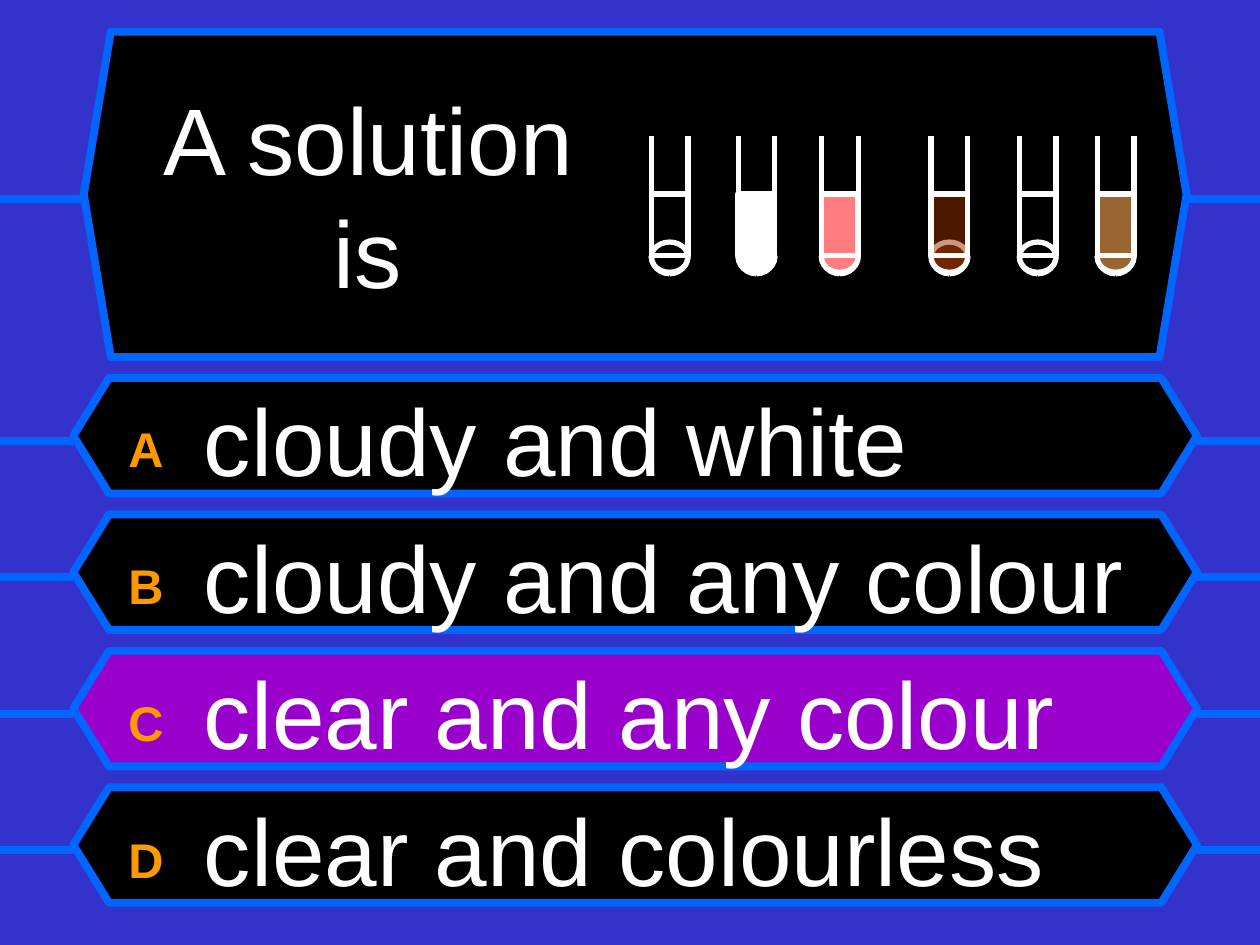
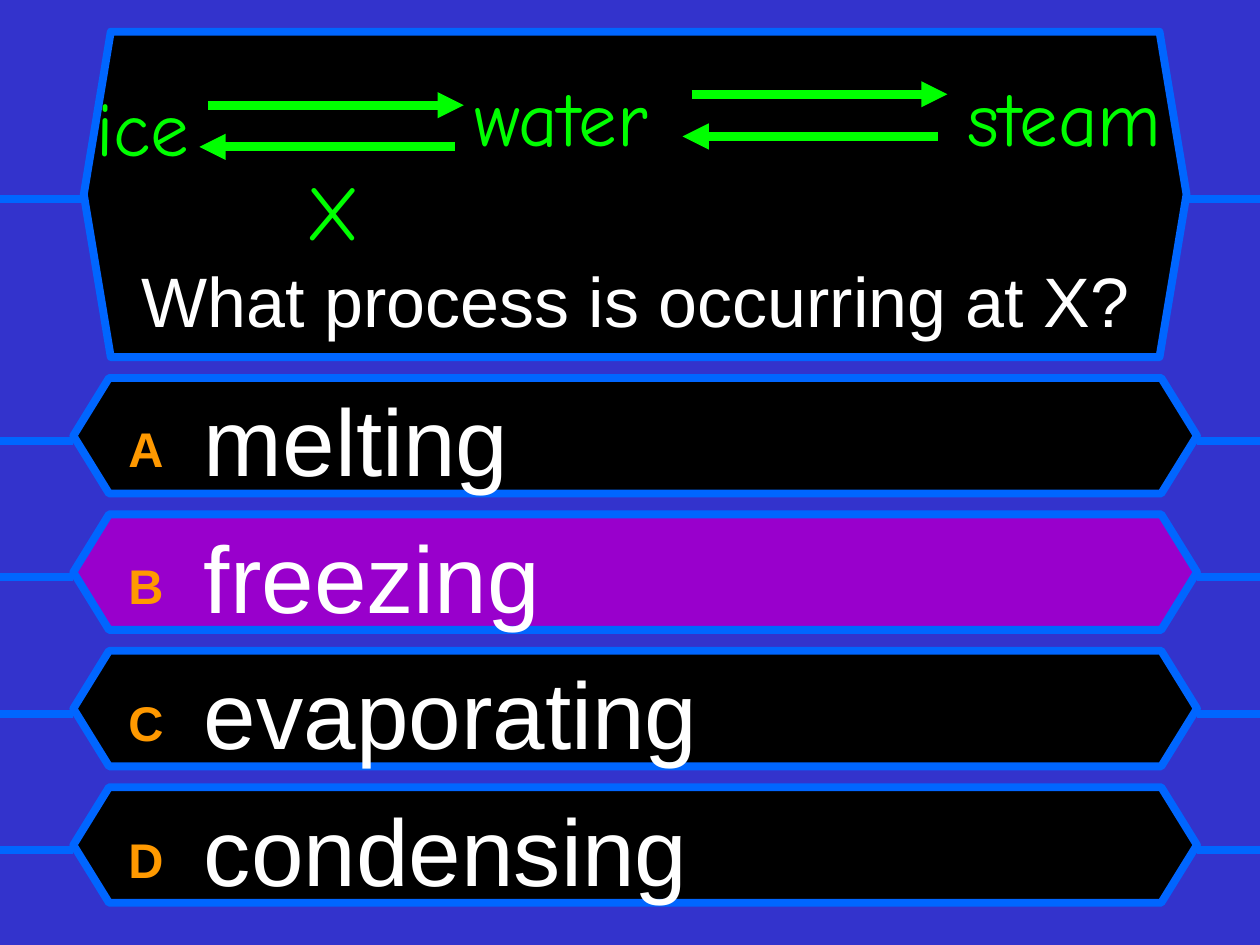
from lxml.etree import SubElement
from pptx import Presentation
from pptx.dml.color import RGBColor as Rgb
from pptx.enum.shapes import MSO_CONNECTOR as Link, MSO_SHAPE as Kind
from pptx.enum.text import MSO_ANCHOR as Anchor, MSO_AUTO_SIZE as Auto, PP_ALIGN as Align
from pptx.oxml.ns import qn
from pptx.util import Cm, Pt

HUE = {
    "back": "3333CC", "panel": "000000", "edge": "0066FF", "right": "9900CC",
    "text": "FFFFFF", "letter": "FF9900", "change": "00FF00",
    "pink": "FF7C80", "rust": "993300", "tan": "996633",
}
FONT, HAND = "Arial", "Comic Neue"
WIDE, HIGH = 25.4, 19.05
ROW_TOP, ROW_STEP = 7.62, 2.75
TUBES = [(13.13, None), (14.88, "text"), (16.56, "pink"),
         (18.77, "rust"), (20.55, None), (22.12, "tan")]
LABELS = [("ice", 1.69, 1.48, 4.1), ("water", 9.31, 1.27, 4.98),
          ("steam", 19.26, 1.27, 5.29), ("X", 5.93, 3.18, 2.12)]
ARROWS = [(4.19, 2.12, 9.35), (9.17, 2.96, 4.02),
          (13.94, 1.9, 19.1), (18.9, 2.75, 13.76)]


def tint(name):
    return Rgb.from_string(HUE[name])


def style(font, size, hue, face=FONT, bold=False):
    font.size, font.name, font.bold = Pt(size), face, bold
    font.color.rgb = tint(hue)


def draw(shapes, kind, box, fill, edge, width, turns=(), alpha=None):
    shape = shapes.add_shape(kind, *map(Cm, box))
    shape.shadow.inherit = False
    for spot, turn in enumerate(turns):
        shape.adjustments[spot] = turn
    if fill:
        shape.fill.solid()
        shape.fill.fore_color.rgb = tint(fill)
    else:
        shape.fill.background()
    if alpha:
        clr = shape.element.spPr.find(qn("a:solidFill"))[0]
        SubElement(clr, qn("a:alpha"), val=str(alpha * 1000))
    shape.line.color.rgb = tint(edge)
    shape.line.width = Pt(width)


def rule(shapes, start, end, hue, width, arrow=False):
    line = shapes.add_connector(Link.STRAIGHT, *map(Cm, start + end))
    line.line.color.rgb = tint(hue)
    line.line.width = Pt(width)
    if arrow:
        SubElement(line.get_or_add_ln(), qn("a:tailEnd"), type="triangle")
    SubElement(line.element.spPr, qn("a:effectLst"))


def panel(shapes, box, slant, wire, fill="panel"):
    draw(shapes, Kind.HEXAGON, box, fill, "edge", 4.5, [slant])
    left, width = box[0], box[2]
    rule(shapes, (left, wire), (0, wire), "edge", 4.5)
    rule(shapes, (WIDE, wire), (left + width, wire), "edge", 4.5)


def head(slide, text, box, size):
    title = slide.shapes.title
    title.left, title.top, title.width, title.height = map(Cm, box)
    slide.shapes.element.append(title.element)
    frame = title.text_frame
    frame.text = text
    frame.word_wrap, frame.auto_size = True, Auto.NONE
    frame.vertical_anchor = Anchor.MIDDLE
    para = frame.paragraphs[0]
    para.alignment = Align.CENTER
    style(para.font, size, "text")


def frame_at(shapes, box):
    frame = shapes.add_textbox(*map(Cm, box)).text_frame
    frame.word_wrap = True
    return frame


def list_all(slide, words):
    frame = frame_at(slide.shapes, (2.34, 7.57, 21.17, 11))
    for spot, (key, word) in enumerate(zip("ABCD", words)):
        para = frame.add_paragraph() if spot else frame.paragraphs[0]
        props = para._p.get_or_add_pPr()
        props.set("marL", str(Cm(1.52)))
        props.set("indent", str(Cm(-1.52)))
        if spot:
            para.space_before = Pt(13.4)
        mark, body = para.add_run(), para.add_run()
        mark.text, body.text = key, "\t" + word
        style(mark.font, 48, "letter", bold=True)
        mark._r.get_or_add_rPr().set("baseline", "10000")
        style(body.font, 54, "text")


def quiz(deck, ask, box, size, words, right):
    slide = deck.slides.add_slide(deck.slide_layouts[5])
    panel(slide.shapes, (1.69, 0.64, 22.23, 6.56), 0.083, 4.02)
    for spot, word in enumerate(words):
        top = ROW_TOP + spot * ROW_STEP
        fill = "right" if word == right else "panel"
        panel(slide.shapes, (1.48, top, 22.65, 2.33), 0.309, top + 1.27, fill)
    head(slide, ask, box, size)
    list_all(slide, words)
    return slide


def tube(slide, left, fill):
    shapes = slide.shapes.add_group_shape().shapes
    width, rim, level, base = 0.74, 2.74, 3.91, 5.16
    right = left + width
    look = fill, "text", 3
    alpha = 50 if fill == "rust" else None
    for turn in (0, 54):
        draw(shapes, Kind.ARC, (left, base - 0.36, width, 0.72), *look,
             (turn, turn + 54), alpha)
    for side in (left, right):
        rule(shapes, (side, base), (side, rim), "text", 3)
    rule(shapes, (left, level), (right, level), "text", 3)
    draw(shapes, Kind.OVAL, (left, 4.88, width, 0.61), *look, alpha=alpha)
    draw(shapes, Kind.RECTANGLE, (left, level, width, base - level), *look,
         alpha=alpha)


def label(slide, text, left, top, width):
    frame = frame_at(slide.shapes, (left, top, width, 2.11))
    frame.text = text
    style(frame.paragraphs[0].font, 44, "change", HAND)


def main():
    """Build the two quiz slides."""
    deck = Presentation()
    deck.slide_width, deck.slide_height = Cm(WIDE), Cm(HIGH)
    back = deck.slide_master.background.fill
    back.solid()
    back.fore_color.rgb = tint("back")

    slide = quiz(deck, "A solution is", (2.34, 1.06, 10.16, 5.72), 54,
                 ["cloudy and white", "cloudy and any colour",
                  "clear and any colour", "clear and colourless"],
                 "clear and any colour")
    for left, fill in TUBES:
        tube(slide, left, fill)

    slide = quiz(deck, "What process is occurring at X?",
                 (2.12, 5.08, 21.38, 1.9), 40,
                 ["melting", "freezing", "evaporating", "condensing"],
                 "freezing")
    for item in LABELS:
        label(slide, *item)
    for start, y, end in ARROWS:
        rule(slide.shapes, (start, y), (end, y), "change", 5, True)

    deck.save("out.pptx")


if __name__ == "__main__":
    main()
